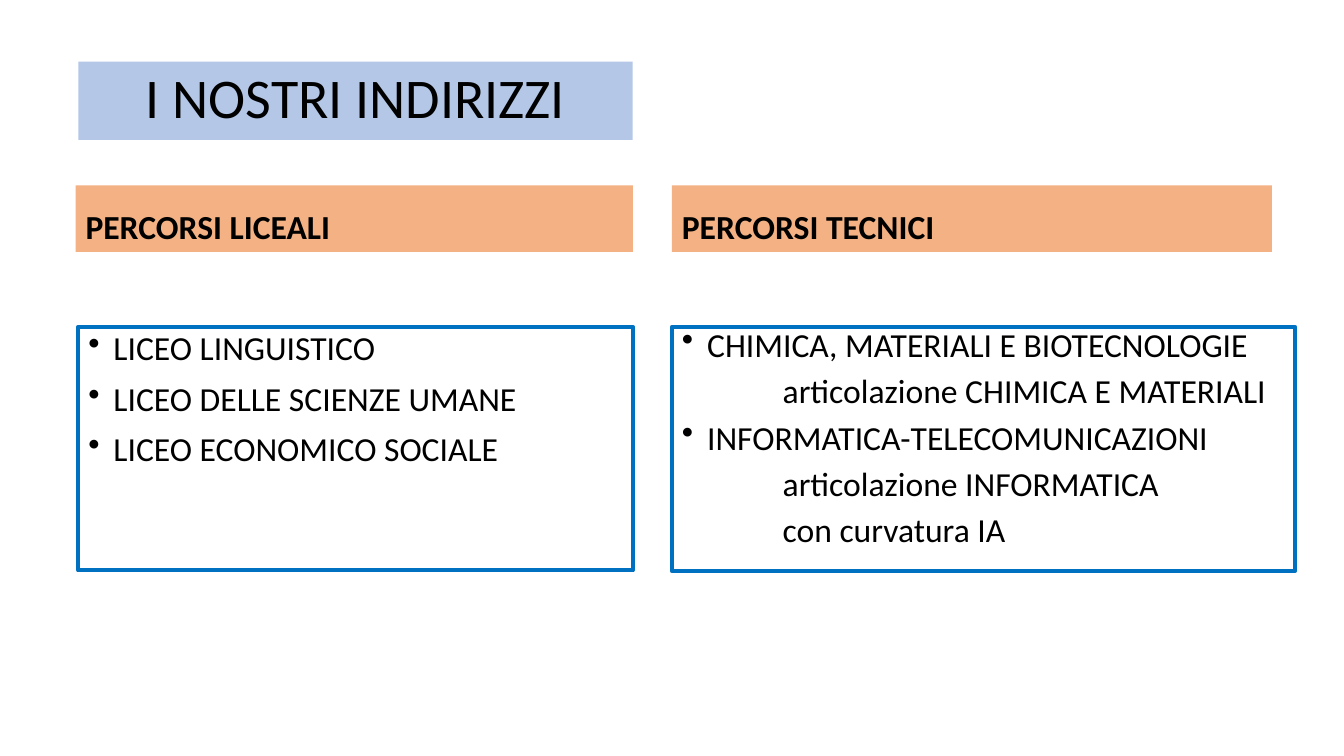
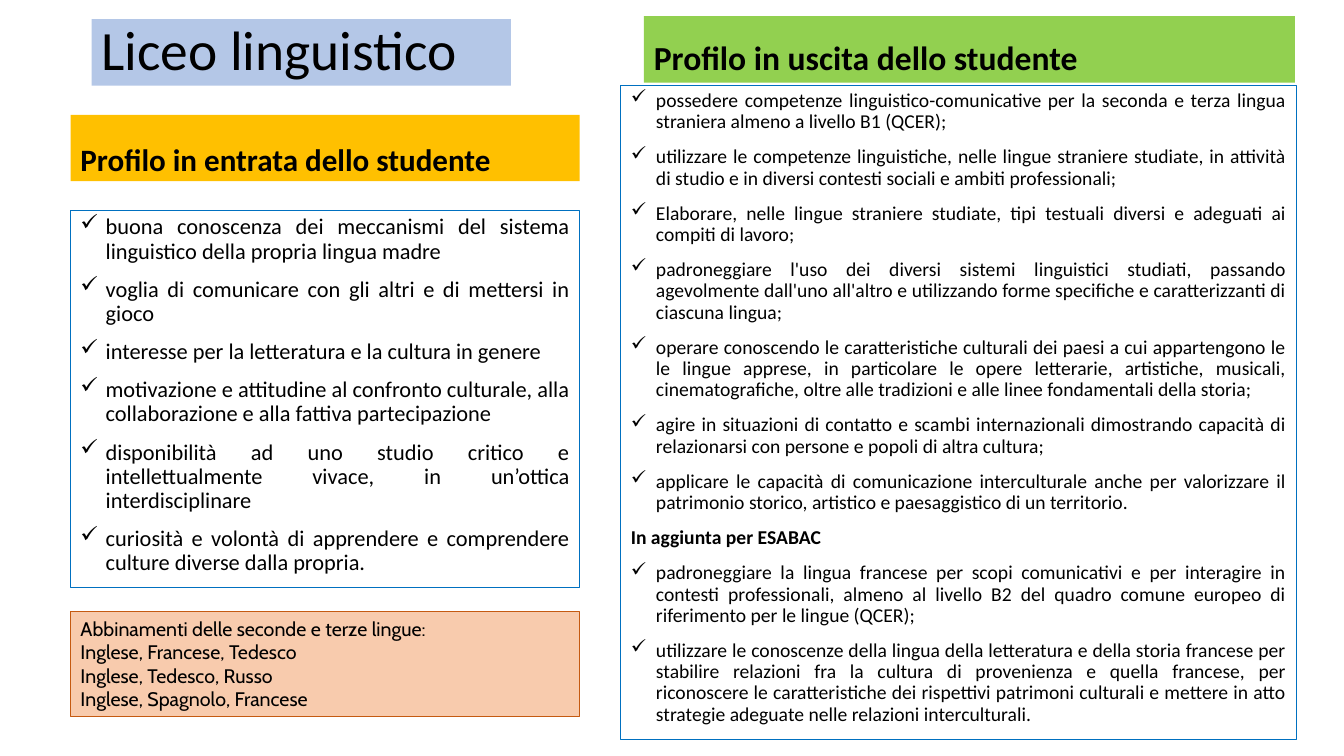
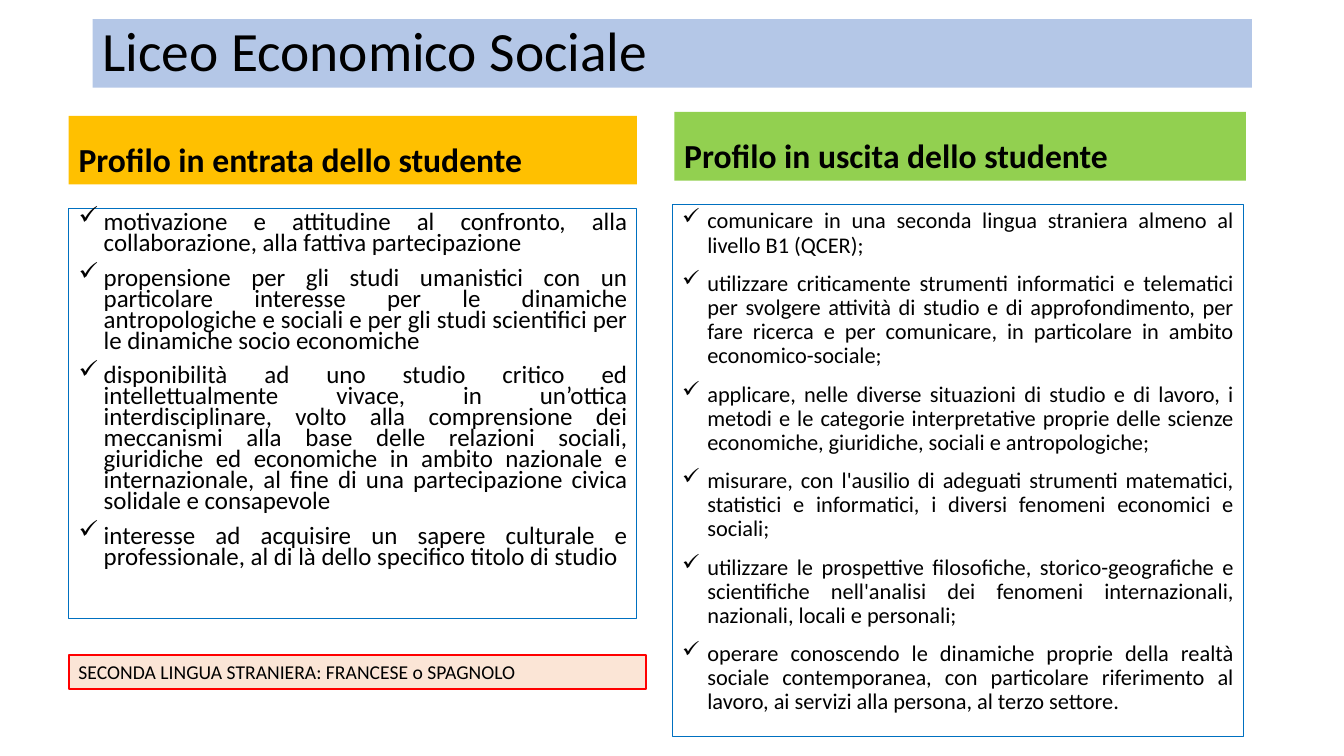
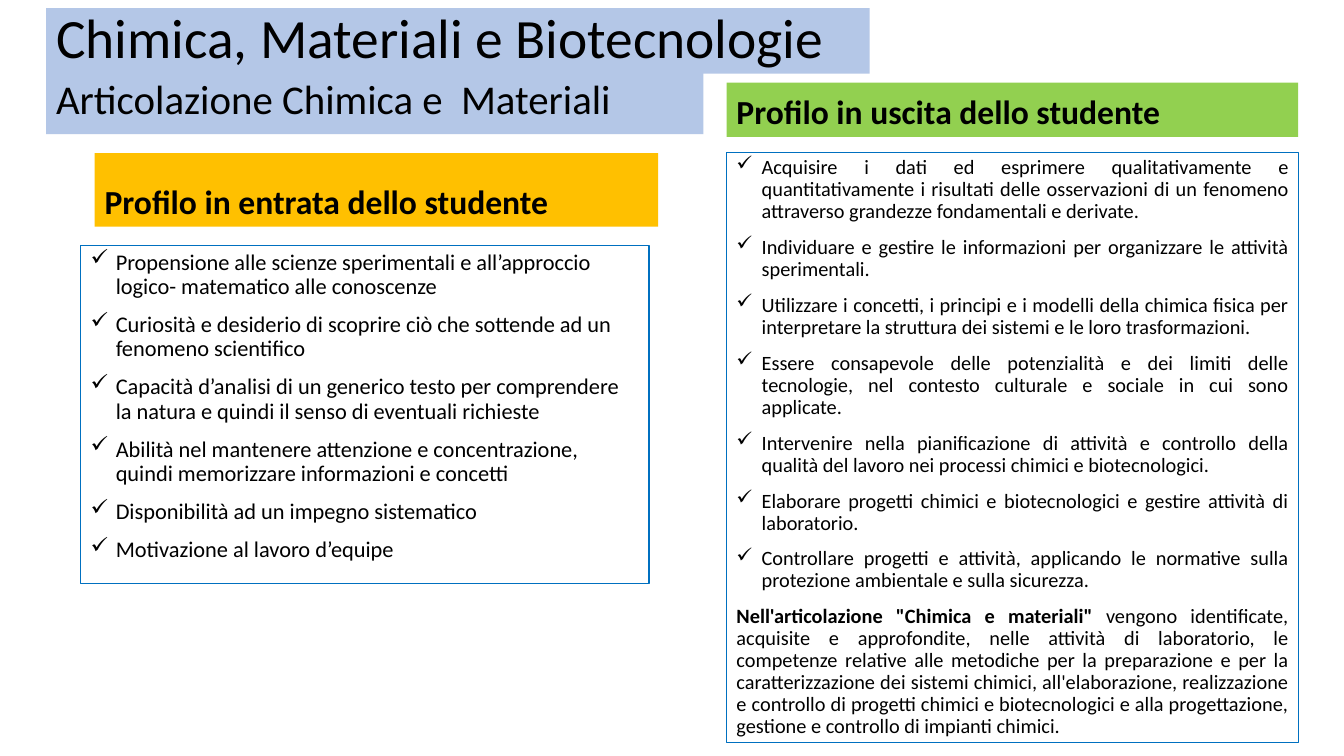
from collections import namedtuple
from dataclasses import dataclass

from lxml.etree import SubElement
from pptx import Presentation
from pptx.dml.color import RGBColor
from pptx.enum.shapes import MSO_SHAPE
from pptx.enum.text import MSO_ANCHOR, PP_ALIGN
from pptx.oxml.ns import qn
from pptx.util import Pt


@dataclass(frozen=True)
class Theme:
    font: str = "Calibri"
    note_font: str = "Cabin"
    text: str = "000000"
    title_fill: str = "B4C7E7"
    path_fill: str = "F4B183"
    entry_fill: str = "FFC000"
    exit_fill: str = "92D050"
    frame: str = "0070C0"
    languages_fill: str = "F8CBAD"
    languages_line: str = "C55A11"
    second_fill: str = "FBE5D6"
    second_line: str = "FF0000"
    cover_size: float = 40
    title_size: float = 39.6
    subtitle_size: float = 29.2
    heading_size: float = 24
    tight_heading_size: float = 22.2
    large_size: float = 17.8
    body_size: float = 16
    dense_size: float = 14.5
    small_size: float = 14
    hanging: float = 18
    gap: float = 10
    spacing: float = 0.9


T = Theme()
Plain = namedtuple("Plain", "runs indent", defaults=[0])
ENTRY = "Profilo in entrata dello studente"
EXIT = "Profilo in uscita dello studente"


def add_box(s, box, fill=None, line=None, weight=0.75, anchor=MSO_ANCHOR.TOP):
    sp = s.shapes.add_shape(MSO_SHAPE.RECTANGLE, *map(Pt, box))
    sp.shadow.inherit = False
    if fill:
        sp.fill.solid()
        sp.fill.fore_color.rgb = RGBColor.from_string(fill)
    else:
        sp.fill.background()
    if line:
        sp.line.color.rgb = RGBColor.from_string(line)
        sp.line.width = Pt(weight)
    else:
        sp.line.fill.background()
    tf = sp.text_frame
    tf.word_wrap = True
    tf.vertical_anchor = anchor
    return tf


def write(tf, text, size=T.body_size, font=T.font, bold=False, align=PP_ALIGN.LEFT,
          spacing=T.spacing, before=0, bullet=None, indent=0):
    first = not tf.paragraphs[0].runs
    p = tf.paragraphs[0] if first else tf.add_paragraph()
    p.alignment = align
    p.line_spacing = spacing
    p.space_before = Pt(0 if first else before)
    pPr = p._p.get_or_add_pPr()
    pPr.set("marL", str(Pt(T.hanging if bullet else indent)))
    pPr.set("indent", str(Pt(-T.hanging if bullet else 0)))
    if bullet:
        SubElement(pPr, qn("a:buChar")).set("char", bullet)
    for words, strong in [(text, bold)] if isinstance(text, str) else text:
        r = p.add_run()
        r.text = words
        r.font.name = font
        r.font.size = Pt(size)
        r.font.bold = strong
        r.font.color.rgb = RGBColor.from_string(T.text)


def title(s, box, text, size=T.title_size, align=PP_ALIGN.LEFT):
    tf = add_box(s, box, fill=T.title_fill, anchor=MSO_ANCHOR.MIDDLE)
    write(tf, text, size=size, align=align)


def note(s, box, lines, fill, line, weight=0.75, font=T.font):
    tf = add_box(s, box, fill=fill, line=line, weight=weight)
    for text in lines:
        write(tf, text, size=T.small_size, font=font, spacing=1.0)


def column(s, box, heading, fill, items, head_h=47.5, gap=20, shift=0, head_w=None,
           head_size=T.heading_size, head_spacing=T.spacing, size=T.body_size,
           spacing=T.spacing, align=PP_ALIGN.JUSTIFY, bullet="✓", weight=0.75):
    x, y, w, h = box
    tf = add_box(s, (x + shift, y, head_w or w, head_h), fill=fill, anchor=MSO_ANCHOR.BOTTOM)
    write(tf, heading, size=head_size, bold=True, spacing=head_spacing)
    top = head_h + gap
    tf = add_box(s, (x, y + top, w, h - top), line=T.frame, weight=weight)
    for item in items:
        plain = isinstance(item, Plain)
        write(tf, item.runs if plain else item, size=size, spacing=spacing, align=align,
              before=T.gap, bullet=None if plain else bullet,
              indent=item.indent if plain else 0)


def paths_slide(s):
    title(s, (56, 44, 396, 56), "I NOSTRI INDIRIZZI", size=T.cover_size, align=PP_ALIGN.CENTER)
    style = dict(fill=T.path_fill, size=T.heading_size, gap=53.5,
                 align=PP_ALIGN.LEFT, bullet="•", weight=3)
    column(s, (56, 132.5, 396, 275), "PERCORSI LICEALI", items=[
        "LICEO LINGUISTICO",
        "LICEO DELLE SCIENZE UMANE",
        "LICEO ECONOMICO SOCIALE",
    ], shift=-2, head_w=398, **style)
    column(s, (480, 132.5, 445, 275.5), "PERCORSI TECNICI", items=[
        "CHIMICA, MATERIALI E BIOTECNOLOGIE",
        Plain("articolazione CHIMICA E MATERIALI", 72),
        "INFORMATICA-TELECOMUNICAZIONI",
        Plain("articolazione INFORMATICA", 72),
        Plain("con curvatura IA", 72),
    ], head_w=428.5, spacing=0.8, **style)


def languages_slide(s):
    title(s, (65.5, 13.7, 299.5, 47.5), "Liceo linguistico")
    column(s, (50.4, 82, 363.6, 337.8), ENTRY, T.entry_fill, [
        "buona conoscenza dei meccanismi del sistema linguistico della propria lingua madre",
        "voglia di comunicare con gli altri e di mettersi in gioco",
        "interesse per la letteratura e la cultura in genere",
        "motivazione e attitudine al confronto culturale, alla collaborazione e alla fattiva partecipazione",
        "disponibilità ad uno studio critico e intellettualmente vivace, in un’ottica interdisciplinare",
        "curiosità e volontà di apprendere e comprendere culture diverse dalla propria.",
    ], gap=21, head_size=T.tight_heading_size, head_spacing=0.7)
    column(s, (443.5, 11.5, 482.4, 517), EXIT, T.exit_fill, [
        "possedere competenze linguistico-comunicative per la seconda e terza lingua straniera almeno a livello B1 (QCER);",
        "utilizzare le competenze linguistiche, nelle lingue straniere studiate, in attività di studio e in diversi contesti sociali e ambiti professionali;",
        "Elaborare, nelle lingue straniere studiate, tipi testuali diversi e adeguati ai compiti di lavoro;",
        "padroneggiare l'uso dei diversi sistemi linguistici studiati, passando agevolmente dall'uno all'altro e utilizzando forme specifiche e caratterizzanti di ciascuna lingua;",
        "operare conoscendo le caratteristiche culturali dei paesi a cui appartengono le le lingue apprese, in particolare le opere letterarie, artistiche, musicali, cinematografiche, oltre alle tradizioni e alle linee fondamentali della storia;",
        "agire in situazioni di contatto e scambi internazionali dimostrando capacità di relazionarsi con persone e popoli di altra cultura;",
        "applicare le capacità di comunicazione interculturale anche per valorizzare il patrimonio storico, artistico e paesaggistico di un territorio.",
        Plain([("In aggiunta per ESABAC", True)]),
        "padroneggiare la lingua francese per scopi comunicativi e per interagire in contesti professionali, almeno al livello B2 del quadro comune europeo di riferimento per le lingue (QCER);",
        "utilizzare le conoscenze della lingua della letteratura e della storia francese per stabilire relazioni fra la cultura di provenienza e quella francese, per riconoscere le caratteristiche dei rispettivi patrimoni culturali e mettere in atto strategie adeguate nelle relazioni interculturali.",
    ], gap=2.2, shift=16.5, head_w=465, size=T.small_size)
    note(s, (50.4, 437, 363.6, 75), [
        "Abbinamenti delle seconde e terze lingue:",
        "Inglese, Francese, Tedesco",
        "Inglese, Tedesco, Russo",
        "Inglese, Spagnolo, Francese",
    ], T.languages_fill, T.languages_line, font=T.note_font)


def economics_slide(s):
    title(s, (66.2, 13.7, 828, 49), "Liceo Economico Sociale")
    column(s, (49, 82.8, 406, 359.2), ENTRY, T.entry_fill, [
        "motivazione e attitudine al confronto, alla collaborazione, alla fattiva partecipazione",
        "propensione per gli studi umanistici con un particolare interesse per le dinamiche antropologiche e sociali e per gli studi scientifici per le dinamiche socio economiche",
        "disponibilità ad uno studio critico ed intellettualmente vivace, in un’ottica interdisciplinare, volto alla comprensione dei meccanismi alla base delle relazioni sociali, giuridiche ed economiche in ambito nazionale e internazionale, al fine di una partecipazione civica solidale e consapevole",
        "interesse ad acquisire un sapere culturale e professionale, al di là dello specifico titolo di studio",
    ], head_h=49, gap=17.2, size=T.large_size, spacing=0.7)
    column(s, (480.2, 80, 408.3, 446.4), EXIT, T.exit_fill, [
        "comunicare in una seconda lingua straniera almeno al livello B1 (QCER);",
        "utilizzare criticamente strumenti informatici e telematici per svolgere attività di studio e di approfondimento, per fare ricerca e per comunicare, in particolare in ambito economico-sociale;",
        "applicare, nelle diverse situazioni di studio e di lavoro, i metodi e le categorie interpretative proprie delle scienze economiche, giuridiche, sociali e antropologiche;",
        "misurare, con l'ausilio di adeguati strumenti matematici, statistici e informatici, i diversi fenomeni economici e sociali;",
        "utilizzare le prospettive filosofiche, storico-geografiche e scientifiche nell'analisi dei fenomeni internazionali, nazionali, locali e personali;",
        "operare conoscendo le dinamiche proprie della realtà sociale contemporanea, con particolare riferimento al lavoro, ai servizi alla persona, al terzo settore.",
    ], head_h=49, gap=17.2, shift=1.5)
    note(s, (49, 468, 412.6, 24.5), ["SECONDA LINGUA STRANIERA: FRANCESE o SPAGNOLO"],
         T.second_fill, T.second_line, weight=1.5)


def chemistry_slide(s):
    title(s, (33, 5.8, 588.2, 46.8), "Chimica, Materiali e Biotecnologie")
    column(s, (57.6, 109.4, 406, 307.5), ENTRY, T.entry_fill, [
        "Propensione alle scienze sperimentali e all’approccio logico- matematico alle conoscenze",
        "Curiosità e desiderio di scoprire ciò che sottende ad un fenomeno scientifico",
        "Capacità d’analisi di un generico testo per comprendere la natura e quindi il senso di eventuali richieste",
        "Abilità nel mantenere attenzione e concentrazione, quindi memorizzare informazioni e concetti",
        "Disponibilità ad un impegno sistematico",
        "Motivazione al lavoro d’equipe",
    ], head_h=52.6, gap=13.7, shift=10, head_w=402.5, align=PP_ALIGN.LEFT)
    column(s, (519, 59, 408.3, 471.7), EXIT, T.exit_fill, [
        "Acquisire i dati ed esprimere qualitativamente e quantitativamente i risultati delle osservazioni di un fenomeno attraverso grandezze fondamentali e derivate.",
        "Individuare e gestire le informazioni per organizzare le attività sperimentali.",
        "Utilizzare i concetti, i principi e i modelli della chimica fisica per interpretare la struttura dei sistemi e le loro trasformazioni.",
        "Essere consapevole delle potenzialità e dei limiti delle tecnologie, nel contesto culturale e sociale in cui sono applicate.",
        "Intervenire nella pianificazione di attività e controllo della qualità del lavoro nei processi chimici e biotecnologici.",
        "Elaborare progetti chimici e biotecnologici e gestire attività di laboratorio.",
        "Controllare progetti e attività, applicando le normative sulla protezione ambientale e sulla sicurezza.",
        Plain([
            ("Nell'articolazione \"Chimica e materiali\" ", True),
            ("vengono identificate, acquisite e approfondite, nelle attività di laboratorio, le competenze relative alle metodiche per la preparazione e per la caratterizzazione dei sistemi chimici, all'elaborazione, realizzazione e controllo di progetti chimici e biotecnologici e alla progettazione, gestione e controllo di impianti chimici.", False),
        ]),
    ], head_h=38.9, gap=10.8, size=T.dense_size)
    title(s, (33, 49, 469.4, 46.8), "Articolazione Chimica e  Materiali", size=T.subtitle_size)


def main():
    prs = Presentation()
    prs.slide_width, prs.slide_height = Pt(960), Pt(540)
    for build in (paths_slide, languages_slide, economics_slide, chemistry_slide):
        build(prs.slides.add_slide(prs.slide_layouts[6]))
    prs.save("out.pptx")


if __name__ == "__main__":
    main()
